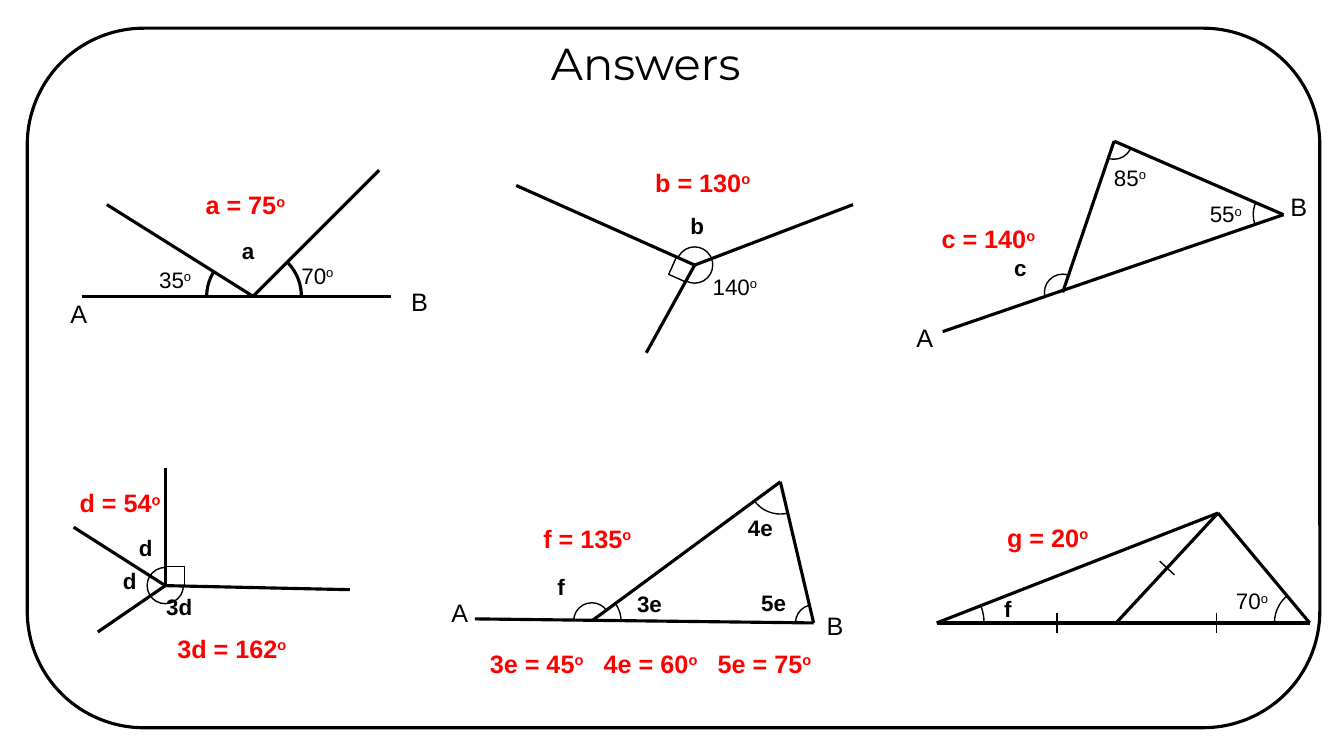
"""Build the answers slide: six angle problems on a three by two grid."""
import math

from lxml import etree
from pptx import Presentation
from pptx.dml.color import RGBColor
from pptx.enum import shapes, text
from pptx.oxml.ns import qn
from pptx.util import Inches, Pt

COLORS = {"ink": "000000", "answer": "FF0000", "paper": "FFFFFF"}
COLUMN, ROW, TOP = 4.3, 3.2, 1.2
THICK, THIN = 2.25, 1
RADIUS, SQUARE, TICK = 0.18, 0.19, 0.1

# Each corner names a start, a vertex and an end, read clockwise.
FIGURES = [
    {"points": {"A": (0.81, 1.74), "B": (3.88, 1.74), "C": (1.06, 0.83),
                "D": (3.76, 0.49), "O": (2.51, 1.74)},
     "lines": "DO CO AB", "corners": "AOC DOB", "radii": {"AOC": 0.46, "DOB": 0.48},
     "arc_width": THICK,
     "labels": [("70^o", 2.89, 1.35), ("35^o", 1.48, 1.39), ("a", 2.3, 1.1),
                ("A", 0.6, 1.71), ("B", 3.98, 1.59), ("a = 75^o", 1.94, 0.63)]},
    {"points": {"O": (2.59, 1.43), "R": (4.16, 0.83), "D": (2.11, 2.3), "L": (0.82, 0.64)},
     "lines": "OR DO LO", "corners": "LOR ROD", "square": "LOD",
     "labels": [("b", 2.45, 0.86), ("140^o", 2.67, 1.46), ("b = 130^o", 2.1, 0.41)]},
    {"points": {"A": (0.75, 2.09), "B": (4.13, 0.93), "P": (1.94, 1.7), "T": (2.45, 0.2)},
     "lines": "PT AB TB", "corners": "ABT BTP APT", "radii": {"ABT": 0.3},
     "labels": [("85^o", 2.35, 0.38), ("55^o", 3.3, 0.74), ("c", 1.36, 1.27),
                ("A", 0.39, 1.95), ("B", 4.1, 0.65), ("c = 140^o", 0.64, 0.97)]},
    {"points": {"O": (1.64, 1.41), "S": (0.97, 1.87), "R": (3.47, 1.45),
                "L": (0.73, 0.83), "U": (1.64, 0.24)},
     "lines": "SO OR LO UO", "corners": "SOL LOU ROS", "square": "UOR",
     "labels": [("d", 1.28, 0.85), ("d", 1.12, 1.18), ("3d", 1.55, 1.44),
                ("d = 54^o", 0.69, 0.39), ("3d = 162^o", 1.66, 1.83)]},
    {"points": {"A": (0.41, 1.74), "B": (3.77, 1.78), "P": (1.57, 1.76), "T": (3.44, 0.38)},
     "lines": "AB PT TB", "corners": "BTP PBT APT TPB", "radii": {"BTP": 0.32, "TPB": 0.29},
     "labels": [("3e", 1.92, 1.41), ("5e", 3.15, 1.4), ("4e", 3.02, 0.65), ("f", 1.13, 1.24),
                ("A", 0.08, 1.48), ("B", 3.8, 1.61), ("f = 135^o", 0.99, 0.74),
                ("3e = 45^o\t4e = 60^o\t5e = 75^o", 0.46, 1.98)]},
    {"points": {"A": (0.69, 1.78), "B": (4.39, 1.78), "M": (2.47, 1.78), "T": (3.48, 0.69)},
     "lines": "AB AT TB TM", "corners": "ABT TAB", "radii": {"ABT": 0.35, "TAB": 0.47},
     "ticks": {"AM": 0.67, "MB": 0.52, "MT": 0.5},
     "labels": [("70^o", 3.56, 1.38), ("f", 1.26, 1.46), ("g = 20^o", 1.29, 0.73)]},
]

deck = Presentation()
deck.slide_width, deck.slide_height = Inches(13.33), Inches(7.5)
page = deck.slides.add_slide(deck.slide_layouts[6])


def add_outline(kind, left, top, width, height, weight):
    shape = page.shapes.add_shape(kind, Inches(left), Inches(top), Inches(width), Inches(height))
    shape.shadow.inherit = False
    shape.fill.background()
    shape.line.color.rgb = RGBColor.from_string(COLORS["ink"])
    shape.line.width = Pt(weight)
    return shape


def add_label(words, left, top, width, height, size, bold, color, face="Arial"):
    box = page.shapes.add_textbox(Inches(left), Inches(top), Inches(width), Inches(height))
    box.text_frame.word_wrap = True
    para = box.text_frame.paragraphs[0]
    if "\t" in words:
        stops = etree.SubElement(para._p.get_or_add_pPr(), qn("a:tabLst"))
        for step in range(1, words.count("\t") + 1):
            etree.SubElement(stops, qn("a:tab"), pos=str(Inches(1.13 * step)), algn="l")
    para.font.name, para.font.size, para.font.bold = face, Pt(size), bold
    para.font.color.rgb = RGBColor.from_string(COLORS[color])
    start, *raised = words.split("^")
    para.add_run().text = start
    for piece in raised:
        span = para.add_run()
        span.text = piece[0]
        span._r.get_or_add_rPr().set("baseline", "30000")
        if piece[1:]:
            para.add_run().text = piece[1:]
    return para


frame = add_outline(shapes.MSO_SHAPE.ROUNDED_RECTANGLE, 0.27, 0.28, 12.82, 6.94, THICK)
frame.fill.solid()
frame.fill.fore_color.rgb = RGBColor.from_string(COLORS["paper"])

for index, figure in enumerate(FIGURES):
    row, column = divmod(index, 3)
    x, y = column * COLUMN, TOP + row * ROW
    points = {name: (x + across, y + down) for name, (across, down) in figure["points"].items()}

    strokes = [(*points[a], *points[b], THICK) for a, b in figure["lines"].split()]
    for (a, b), share in figure.get("ticks", {}).items():
        (x1, y1), (x2, y2) = points[a], points[b]
        middle_x, middle_y = x1 + share * (x2 - x1), y1 + share * (y2 - y1)
        scale = TICK / math.dist(points[a], points[b])
        dx, dy = scale * (y1 - y2), scale * (x2 - x1)
        strokes.append((middle_x - dx, middle_y - dy, middle_x + dx, middle_y + dy, THIN))
    for *ends, weight in strokes:
        line = page.shapes.add_connector(shapes.MSO_CONNECTOR.STRAIGHT, *map(Inches, ends))
        line.line.color.rgb = RGBColor.from_string(COLORS["ink"])
        line.line.width = Pt(weight)
        etree.SubElement(line._element.spPr, qn("a:effectLst"))

    square = figure.get("square", "")
    for corner in [*figure["corners"].split(), *square.split()]:
        vertex_x, vertex_y = points[corner[1]]
        start, end = [
            math.atan2(points[name][1] - vertex_y, points[name][0] - vertex_x) % math.tau
            for name in (corner[0], corner[2])]
        if corner == square:
            left = vertex_x + SQUARE / 2 * (math.cos(start) + math.cos(end) - 1)
            top = vertex_y + SQUARE / 2 * (math.sin(start) + math.sin(end) - 1)
            mark = add_outline(shapes.MSO_SHAPE.RECTANGLE, left, top, SQUARE, SQUARE, THIN)
            mark.rotation = math.degrees(start) % 90
        else:
            radius = figure.get("radii", {}).get(corner, RADIUS)
            arc = add_outline(shapes.MSO_SHAPE.ARC, vertex_x - radius, vertex_y - radius,
                              2 * radius, 2 * radius, figure.get("arc_width", THIN))
            for position, angle in enumerate((start, end)):
                arc.adjustments[position] = math.degrees(angle) * 0.6

    for words, left, top in figure["labels"]:
        length = len(words.replace("^", ""))
        if "=" in words:
            style = (0.15 * length, 0.4, 18, True, "answer")
        elif words.isupper():
            style = (0.3, 0.4, 18, False, "ink")
        else:
            style = (0.2 + 0.16 * length, 0.37, 16, "^" not in words, "ink")
        add_label(words, x + left, y + top, *style)

title = add_label("Answers", 5.14, 0.31, 2.53, 0.64, 32, False, "ink", "Montserrat")
title.alignment = text.PP_ALIGN.CENTER

deck.save("out.pptx")
